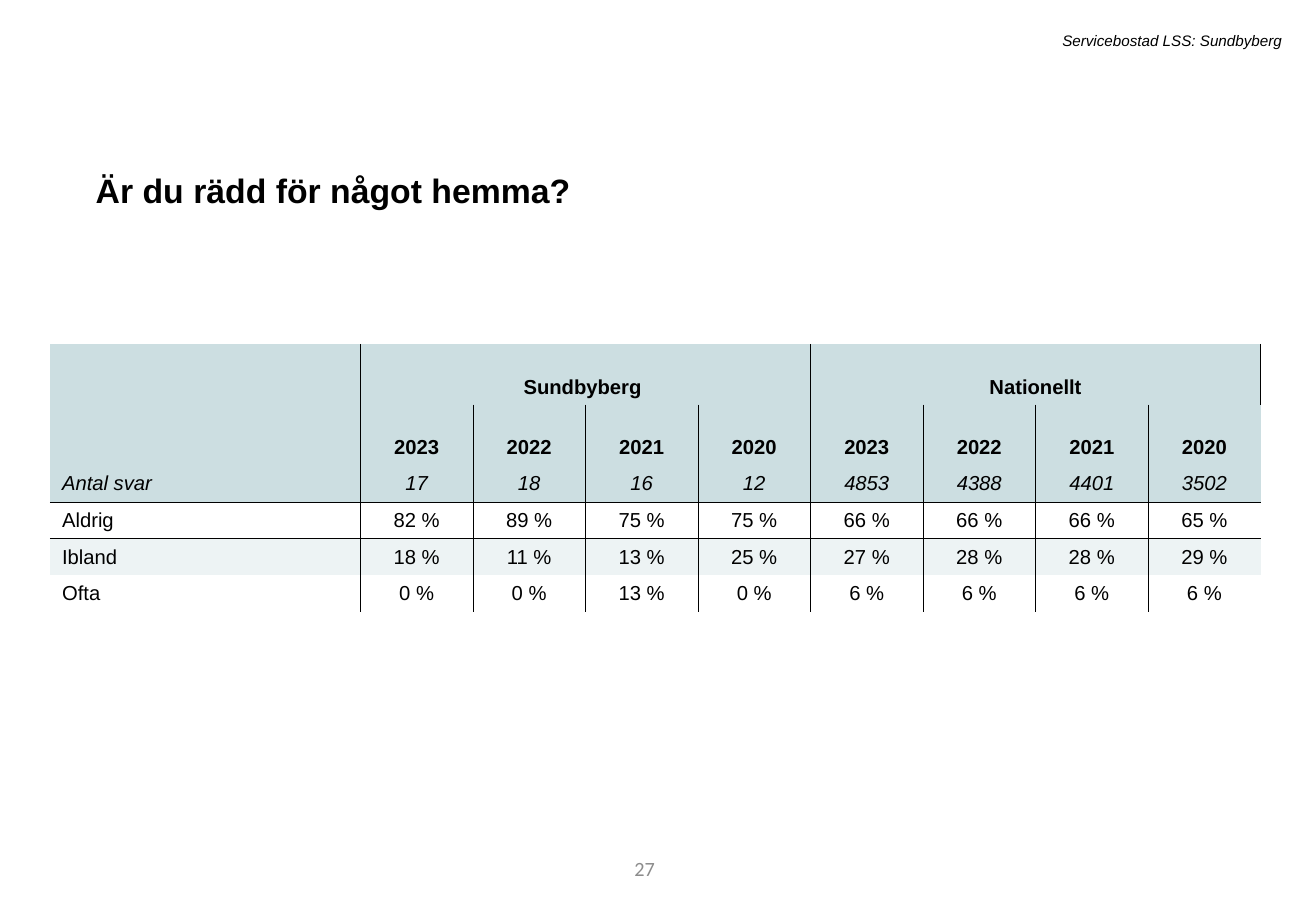
from dataclasses import dataclass

from lxml.etree import SubElement
from pptx import Presentation
from pptx.dml.color import RGBColor
from pptx.enum.text import MSO_ANCHOR, PP_ALIGN
from pptx.oxml.ns import qn
from pptx.util import Pt


@dataclass(frozen=True)
class Theme:
    font: str = "Arial"
    number_font: str = "Calibri"
    ink: str = "000000"
    muted: str = "8C8C8C"
    header_fill: str = "CCDEE1"
    band_fill: str = "EDF3F4"
    plain_fill: str = "FFFFFF"
    title_size: float = 20
    body_size: float = 12
    label_size: float = 9
    rule_width: float = 0.25
    table_style: str = "{2D5ABB26-0587-4C30-8999-92F81FD0307C}"


GROUPS = ("Sundbyberg ", "Nationellt")
YEARS = ("2023", "2022", "2021", "2020")
ANSWER_COUNTS = ("Antal svar", "17", "18", "16", "12", "4853", "4388", "4401", "3502")
SHARES = {
    "Aldrig": (82, 89, 75, 75, 66, 66, 66, 65),
    "Ibland": (18, 11, 13, 25, 27, 28, 28, 29),
    "Ofta": (0, 0, 13, 0, 6, 6, 6, 6),
}
GROUP_ROW, YEAR_ROW, COUNT_ROW = range(3)
HEADER_HEIGHT, LINE_HEIGHT = 36, 21.75
LABEL_WIDTH, VALUE_WIDTH = 184, 66.7


class SlideBuilder:
    def __init__(self, slide, theme):
        self.slide = slide
        self.theme = theme

    def fill_frame(self, frame, text, size, align=PP_ALIGN.LEFT, font=None, color=None,
                   bold=False, italic=False):
        """Put one styled run in the first paragraph and return that paragraph."""
        paragraph = frame.paragraphs[0]
        paragraph.alignment = align
        run = paragraph.add_run()
        run.text = text
        run.font.name = font or self.theme.font
        run.font.size = Pt(size)
        run.font.bold = bold
        run.font.italic = italic
        run.font.color.rgb = RGBColor.from_string(color or self.theme.ink)
        return paragraph

    def text(self, left, top, width, height, text, size, anchor=MSO_ANCHOR.TOP, **style):
        box = self.slide.shapes.add_textbox(Pt(left), Pt(top), Pt(width), Pt(height))
        frame = box.text_frame
        frame.word_wrap = True
        frame.vertical_anchor = anchor
        return self.fill_frame(frame, text, size, **style)

    def rule(self, cell, side):
        """Draw a thin line on one side (L, R, T or B) of a table cell."""
        properties = cell._tc.get_or_add_tcPr()
        line = SubElement(properties, qn(f"a:ln{side}"), w=str(Pt(self.theme.rule_width)))
        fill = SubElement(line, qn("a:solidFill"))
        SubElement(fill, qn("a:srgbClr"), val=self.theme.ink)

    def table(self, left, top, column_widths, row_heights):
        frame = self.slide.shapes.add_table(
            len(row_heights), len(column_widths), Pt(left), Pt(top),
            Pt(sum(column_widths)), Pt(sum(row_heights)))
        table = frame.table
        table.first_row = table.horz_banding = False
        table._tbl.tblPr.find(qn("a:tableStyleId")).text = self.theme.table_style
        for column, width in zip(table.columns, column_widths):
            column.width = Pt(width)
        for row, height in zip(table.rows, row_heights):
            row.height = Pt(height)
        return table

    def cell(self, cell, text, sides, fill, anchor, **style):
        for side in sides:
            self.rule(cell, side)
        cell.fill.solid()
        cell.fill.fore_color.rgb = RGBColor.from_string(fill)
        cell.vertical_anchor = anchor
        if text:
            self.fill_frame(cell.text_frame, text, self.theme.body_size, **style)

    def survey_table(self, left, top):
        group_cells = [text for group in GROUPS
                       for text in (group, *[""] * (len(YEARS) - 1))]
        rows = [["", *group_cells], ["", *YEARS * len(GROUPS)], ANSWER_COUNTS]
        rows += [[answer, *(f"{share} %" for share in shares)]
                 for answer, shares in SHARES.items()]
        last_column = len(group_cells)
        table = self.table(
            left, top, [LABEL_WIDTH] + [VALUE_WIDTH] * last_column,
            [HEADER_HEIGHT] * 2 + [LINE_HEIGHT] * (len(rows) - 2))
        for first in range(1, last_column + 1, len(YEARS)):
            table.cell(GROUP_ROW, first).merge(
                table.cell(GROUP_ROW, first + len(YEARS) - 1))

        for r, row in enumerate(rows):
            heading = r <= YEAR_ROW
            if r <= COUNT_ROW:
                fill = self.theme.header_fill
            else:
                fill = self.theme.plain_fill if r % 2 else self.theme.band_fill
            for c, text in enumerate(row):
                cell = table.cell(r, c)
                if cell.is_spanned:
                    continue
                sides = "L" if c else ""
                if c < last_column:
                    sides += "R"
                sides += {COUNT_ROW: "B", COUNT_ROW + 1: "T"}.get(r, "")
                self.cell(cell, text, sides, fill,
                          MSO_ANCHOR.BOTTOM if heading else MSO_ANCHOR.MIDDLE,
                          align=PP_ALIGN.CENTER if c else PP_ALIGN.LEFT,
                          bold=heading, italic=r == COUNT_ROW)


def main():
    presentation = Presentation()
    presentation.slide_width, presentation.slide_height = Pt(780), Pt(540)
    theme = Theme()
    builder = SlideBuilder(
        presentation.slides.add_slide(presentation.slide_layouts[6]), theme)

    builder.text(219.6, 500.4, 175.7, 28.8, "27", theme.body_size, MSO_ANCHOR.MIDDLE,
                 align=PP_ALIGN.RIGHT, font=theme.number_font, color=theme.muted)
    question = builder.text(49.7, 92.2, 676.8, 33.8, "Är du rädd för något hemma?",
                            theme.title_size, bold=True)
    question.line_spacing = 1.2
    question.space_before = Pt(10)
    builder.survey_table(29.6, 203.8)
    builder.text(128.9, 15.1, 637.9, 18, "Servicebostad LSS: Sundbyberg",
                 theme.label_size, align=PP_ALIGN.RIGHT, italic=True)
    presentation.save("out.pptx")


if __name__ == "__main__":
    main()
